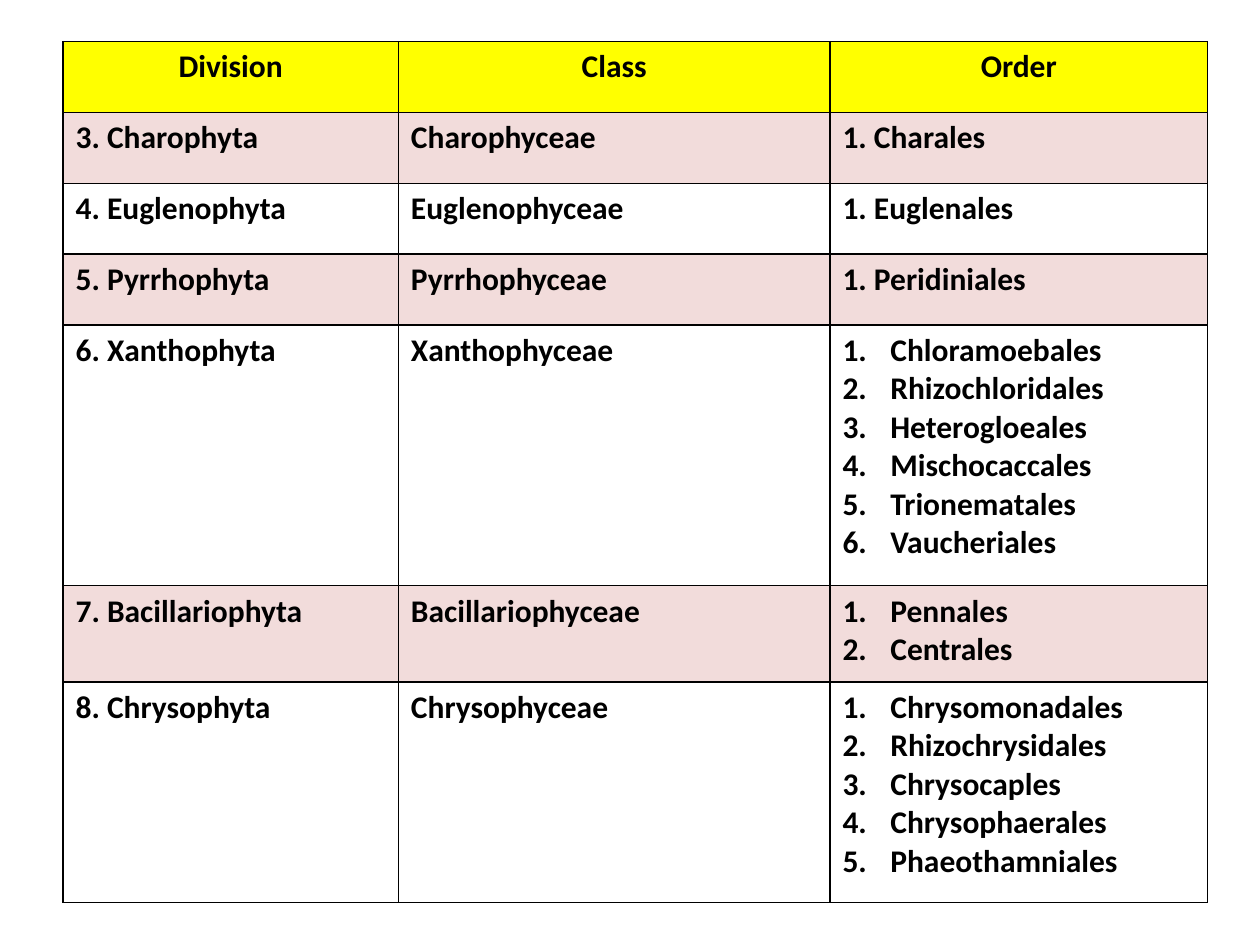
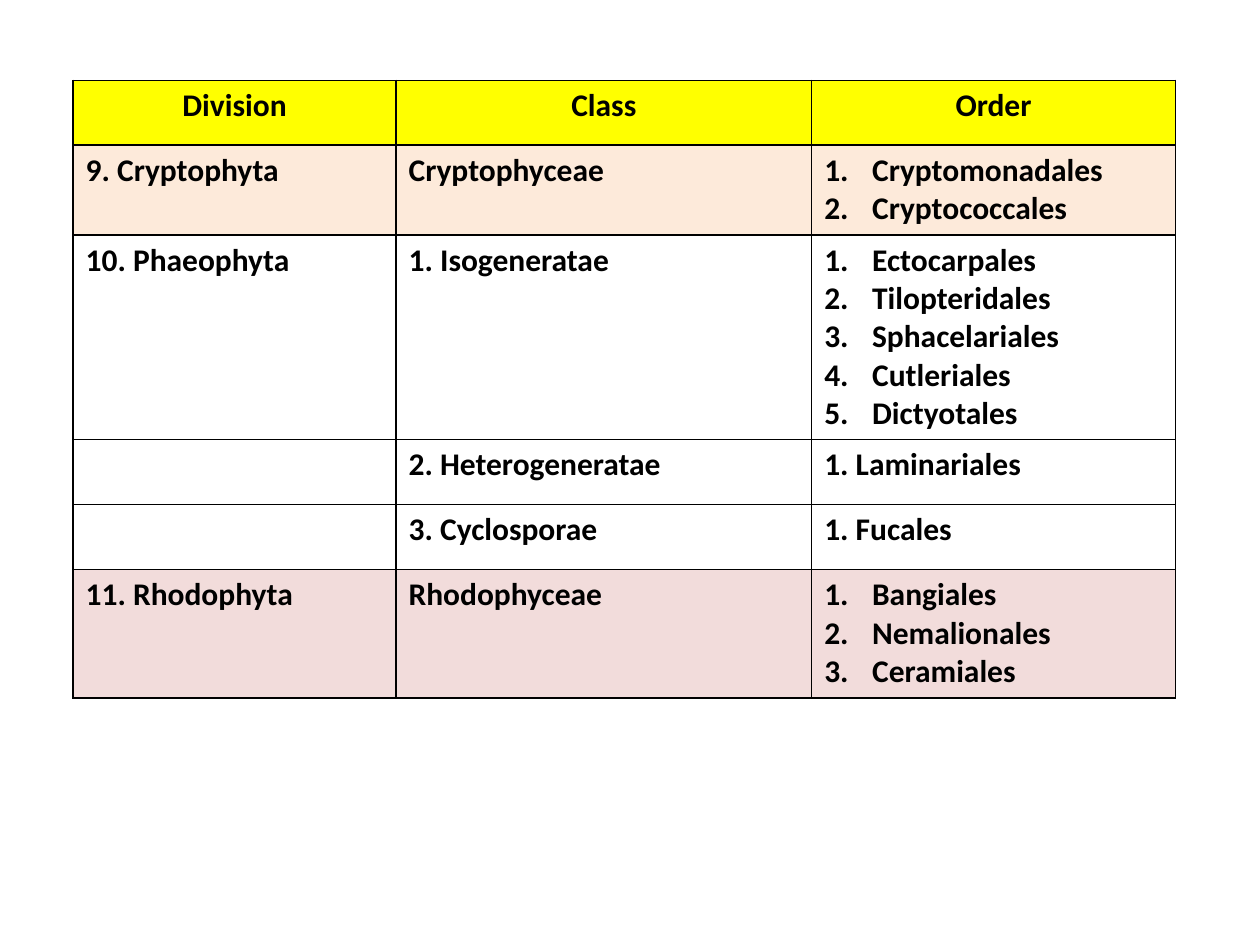
from dataclasses import dataclass

import lxml.etree
import pptx
import pptx.dml.color
import pptx.enum.text
import pptx.oxml.ns
import pptx.util

# Shared look
SLIDE_W, SLIDE_H = 10, 7.5
YELLOW, PINK, PEACH, WHITE, BLACK = "FFFF00", "F2DCDB", "FDEADA", "FFFFFF", "000000"
HEADINGS = ("Division", "Class", "Order")
COLUMN_SHARES = (0.293, 0.377, 0.33)
FONT = {"name": "Calibri", "size": pptx.util.Pt(18), "bold": True}
BORDER_W = pptx.util.Pt(1)
LIST_INDENT = pptx.util.Inches(0.38)


@dataclass
class Row:
    """One division or class; span is its height in single rows."""
    division: str
    class_name: str
    orders: tuple[str, ...]
    fill: str = WHITE
    span: float = 1


@dataclass
class OrderTable:
    """Place and row height in percent of the slide's size."""
    left: float
    top: float
    width: float
    row_height: float
    rows: tuple[Row, ...]


TABLES = (
    OrderTable(5, 4.4, 90.85, 7.5, (
        Row("3. Charophyta", "Charophyceae", ("1. Charales",), PINK),
        Row("4. Euglenophyta", "Euglenophyceae", ("1. Euglenales",)),
        Row("5. Pyrrhophyta", "Pyrrhophyceae", ("1. Peridiniales",), PINK),
        Row("6. Xanthophyta", "Xanthophyceae",
            ("Chloramoebales", "Rhizochloridales", "Heterogloeales",
             "Mischocaccales", "Trionematales", "Vaucheriales"), WHITE, 3.68),
        Row("7. Bacillariophyta", "Bacillariophyceae",
            ("Pennales", "Centrales"), PINK, 1.36),
        Row("8. Chrysophyta", "Chrysophyceae",
            ("Chrysomonadales", "Rhizochrysidales", "Chrysocaples",
             "Chrysophaerales", "Phaeothamniales"), WHITE, 3.11),
    )),
    OrderTable(5.8, 8.5, 87.5, 6.87, (
        Row("9. Cryptophyta", "Cryptophyceae",
            ("Cryptomonadales", "Cryptococcales"), PEACH, 1.38),
        Row("10. Phaeophyta", "1. Isogeneratae",
            ("Ectocarpales", "Tilopteridales", "Sphacelariales",
             "Cutleriales", "Dictyotales"), WHITE, 3.15),
        Row("", "2. Heterogeneratae", ("1. Laminariales",)),
        Row("", "3. Cyclosporae", ("1. Fucales",)),
        Row("11. Rhodophyta", "Rhodophyceae",
            ("Bangiales", "Nemalionales", "Ceramiales"), PINK, 1.98),
    )),
)


def rgb(value: str) -> pptx.dml.color.RGBColor:
    return pptx.dml.color.RGBColor.from_string(value)


def across(percent: float) -> int:
    return pptx.util.Inches(SLIDE_W * percent / 100)


def down(percent: float) -> int:
    return pptx.util.Inches(SLIDE_H * percent / 100)


def add_element(parent, tag: str, **attributes: str):
    return lxml.etree.SubElement(parent, pptx.oxml.ns.qn(tag), attributes)


def add_borders(cell) -> None:
    tc_pr = cell._tc.get_or_add_tcPr()
    for side in ("a:lnL", "a:lnR", "a:lnT", "a:lnB"):
        line = add_element(tc_pr, side, w=str(BORDER_W))
        add_element(add_element(line, "a:solidFill"), "a:srgbClr", val=BLACK)


def number_paragraph(p) -> None:
    p_pr = p._p.get_or_add_pPr()
    p_pr.set("marL", str(LIST_INDENT))
    p_pr.set("indent", str(-LIST_INDENT))
    add_element(p_pr, "a:buFont", typeface="+mj-lt")
    add_element(p_pr, "a:buAutoNum", type="arabicPeriod")


def fill_cell(cell, lines: tuple[str, ...], fill: str, heading: bool = False) -> None:
    add_borders(cell)
    cell.fill.solid()
    cell.fill.fore_color.rgb = rgb(fill)
    tf = cell.text_frame
    for i, line in enumerate(lines):
        p = tf.add_paragraph() if i else tf.paragraphs[0]
        if heading:
            p.alignment = pptx.enum.text.PP_ALIGN.CENTER
        if len(lines) > 1:
            number_paragraph(p)
        if line:
            r = p.add_run()
            r.text = line
            for name, value in FONT.items():
                setattr(r.font, name, value)
            r.font.color.rgb = rgb(BLACK)


def add_order_table(s, spec_table: OrderTable) -> None:
    spans = [1] + [row.span for row in spec_table.rows]
    width = across(spec_table.width)
    table = s.shapes.add_table(
        len(spans), len(HEADINGS), across(spec_table.left), down(spec_table.top),
        width, down(spec_table.row_height * sum(spans))).table
    table.first_row = table.horz_banding = False
    for column, share in zip(table.columns, COLUMN_SHARES):
        column.width = int(width * share)
    for table_row, span in zip(table.rows, spans):
        table_row.height = down(spec_table.row_height * span)

    # Heading row, then one row per entry
    for c, heading in enumerate(HEADINGS):
        fill_cell(table.cell(0, c), (heading,), YELLOW, heading=True)
    for i, row in enumerate(spec_table.rows, start=1):
        for c, lines in enumerate(((row.division,), (row.class_name,), row.orders)):
            fill_cell(table.cell(i, c), lines, row.fill)


def main() -> None:
    prs = pptx.Presentation()
    prs.slide_width = pptx.util.Inches(SLIDE_W)
    prs.slide_height = pptx.util.Inches(SLIDE_H)
    blank = prs.slide_layouts[6]
    for order_table in TABLES:
        add_order_table(prs.slides.add_slide(blank), order_table)
    prs.save("out.pptx")


if __name__ == "__main__":
    main()
